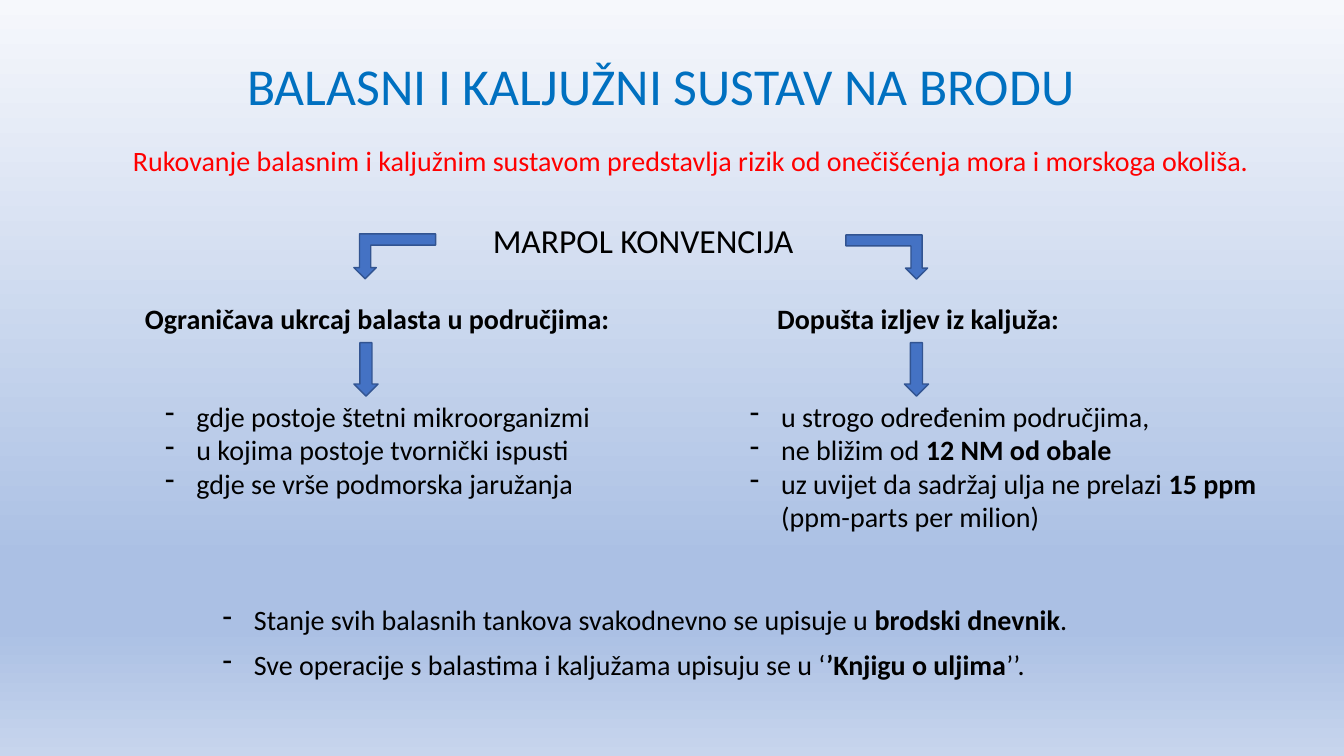
from lxml.etree import SubElement
from pptx import Presentation
from pptx.dml.color import RGBColor
from pptx.enum.shapes import MSO_SHAPE as Preset
from pptx.enum.text import MSO_ANCHOR as Anchor, PP_ALIGN as Align
from pptx.oxml.ns import qn
from pptx.util import Inches, Pt

WIDTH, HEIGHT = Inches(13.33), Inches(7.5)
COLUMN, ROW = WIDTH / 100, HEIGHT / 100
INDENT = Inches(0.31)
LINE_ROWS = 5.87
FONT = "Calibri"

TITLE_BLUE = RGBColor(0x00, 0x70, 0xC0)
WARNING_RED = RGBColor(0xFF, 0x00, 0x00)
BLACK = RGBColor(0x00, 0x00, 0x00)
ARROW_FILL = RGBColor(0x44, 0x72, 0xC4)
ARROW_LINE = RGBColor(0x32, 0x54, 0x91)
SKY = RGBColor(0xF6, 0xF8, 0xFC)
SEA = RGBColor(0xAB, 0xC0, 0xE4)
SHORE = RGBColor(0xC7, 0xD5, 0xED)
BACKGROUND_STOPS = [(0, SKY), (74, SEA), (83, SEA), (100, SHORE)]

BALLAST_LIMITS = [
    [("gdje postoje štetni mikroorganizmi", False)],
    [("u kojima postoje tvornički ispusti", False)],
    [("gdje se vrše podmorska jaružanja", False)],
]
BILGE_RULES = [
    [("u strogo određenim područjima,", False)],
    [("ne bližim od ", False), ("12 NM od obale", True)],
    [("uz uvijet da sadržaj ulja ne prelazi ", False), ("15 ppm", True)],
]
PPM_MEANING = "(ppm-parts per milion)"
RECORDS = [
    [("Stanje svih balasnih tankova svakodnevno se upisuje u ", False),
     ("brodski dnevnik", True), (".", False)],
    [("Sve operacije s balastima i kaljužama upisuju se u ‘", False),
     ("’Knjigu o uljima", True), ("’’.", False)],
]


def grid(left, top, width, height):
    return (round(left * COLUMN), round(top * ROW),
            round(width * COLUMN), round(height * ROW))


def paint_background(page):
    fill = page.background.fill
    fill.gradient()
    fill.gradient_angle = 270
    stops = page.background._cSld.find(".//" + qn("a:gsLst"))
    for stop in list(stops):
        stops.remove(stop)
    for percent, color in BACKGROUND_STOPS:
        stop = SubElement(stops, qn("a:gs"), pos=str(percent * 1000))
        SubElement(stop, qn("a:srgbClr"), val=str(color))


def add_span(para, text, bold=False, size=20, color=BLACK):
    span = para.add_run()
    span.text = text
    font = span.font
    font.name, font.size, font.bold = FONT, Pt(size), bold
    font.color.rgb = color


def set_title(page, text):
    title = page.shapes.title
    title.left, title.top, title.width, title.height = grid(17.63, 7.73, 64.75, 8.4)
    title.text_frame.vertical_anchor = Anchor.MIDDLE
    para = title.text_frame.paragraphs[0]
    para.alignment = Align.LEFT
    para.line_spacing = 0.8
    add_span(para, text, size=37, color=TITLE_BLUE)


def add_box(page, place):
    box = page.shapes.add_textbox(*grid(*place))
    box.text_frame.word_wrap = True
    return box.text_frame


def add_line(page, place, text, **style):
    add_span(add_box(page, place).paragraphs[0], text, **style)


def indent(para, bullet=None):
    properties = para._p.get_or_add_pPr()
    properties.set("marL", str(INDENT))
    properties.set("indent", str(-INDENT if bullet else 0))
    if bullet:
        SubElement(properties, qn("a:buChar"), char=bullet)


def add_list(page, place, items):
    frame = add_box(page, place)
    for number, spans in enumerate(items):
        para = frame.add_paragraph() if number else frame.paragraphs[0]
        indent(para, "-")
        for text, bold in spans:
            add_span(para, text, bold)
    return frame


def add_arrow(page, preset, place):
    arrow = page.shapes.add_shape(preset, *grid(*place))
    arrow.shadow.inherit = False
    arrow.fill.solid()
    arrow.fill.fore_color.rgb = ARROW_FILL
    arrow.line.color.rgb = ARROW_LINE
    arrow.line.width = Pt(1)
    return arrow


def main():
    deck = Presentation()
    deck.slide_width, deck.slide_height = WIDTH, HEIGHT
    page = deck.slides.add_slide(deck.slide_layouts[5])
    paint_background(page)
    set_title(page, "BALASNI I KALJUŽNI SUSTAV NA BRODU")

    add_line(page, (9.15, 18.27, 84.77, LINE_ROWS),
             "Rukovanje balasnim i kaljužnim sustavom predstavlja rizik "
             "od onečišćenja mora i morskoga okoliša.", color=WARNING_RED)
    add_line(page, (35.93, 28.4, 24.68, 6.67), "MARPOL KONVENCIJA", size=24)
    add_line(page, (10.05, 39.2, 36.38, LINE_ROWS),
             "Ograničava ukrcaj balasta u područjima:", bold=True)
    add_line(page, (57.09, 39.2, 26.41, LINE_ROWS),
             "Dopušta izljev iz kaljuža:", bold=True)

    add_list(page, (11.55, 52.13, 33.46, 19.33), BALLAST_LIMITS)
    bilge = add_list(page, (55.06, 52.13, 39.46, 19.33), BILGE_RULES)
    meaning = bilge.add_paragraph()
    indent(meaning)
    add_span(meaning, PPM_MEANING)
    for number, record in enumerate(RECORDS):
        add_list(page, (15.83, 79.07 + number * LINE_ROWS, 81.25, LINE_ROWS), [record])

    to_ballast = add_arrow(page, Preset.BENT_UP_ARROW, (26.33, 30.93, 6.08, 5.95))
    to_ballast.rotation = 180
    to_bilge = add_arrow(page, Preset.BENT_UP_ARROW, (62.94, 31.07, 6.08, 5.87))
    to_bilge._element.spPr.find(qn("a:xfrm")).set("flipV", "1")
    for left in (26.33, 67.29):
        add_arrow(page, Preset.DOWN_ARROW, (left, 45.33, 1.8, 7.07))

    deck.save("out.pptx")


if __name__ == "__main__":
    main()
